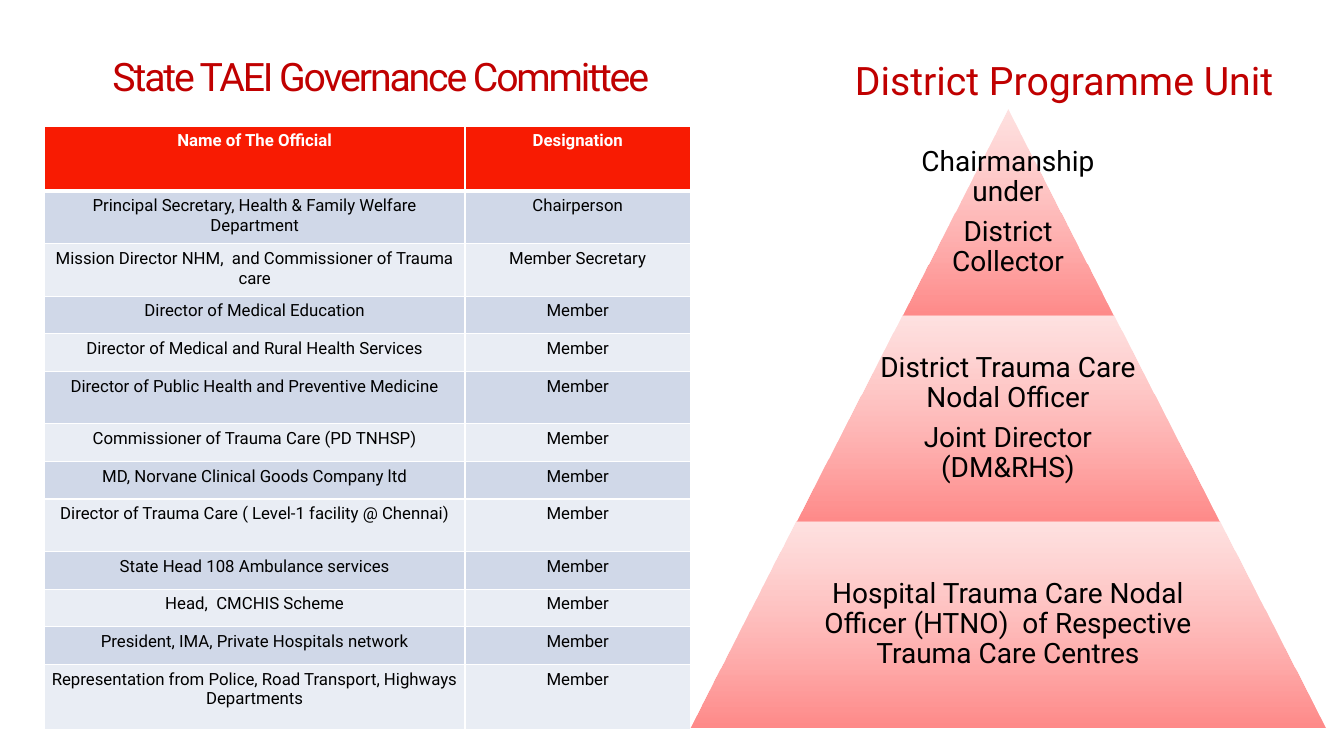
from dataclasses import dataclass

from lxml.etree import SubElement
from pptx import Presentation
from pptx.dml.color import RGBColor as Rgb
from pptx.enum.shapes import MSO_SHAPE as Preset
from pptx.enum.text import MSO_ANCHOR as Anchor, PP_ALIGN as Align
from pptx.oxml.ns import qn
from pptx.slide import Slide
from pptx.table import _Cell as Cell
from pptx.text.text import _Paragraph as Paragraph
from pptx.util import Pt


@dataclass(frozen=True)
class Theme:
    font: str = "Roboto"
    heading: str = "C00000"
    body: str = "000000"
    white: str = "FFFFFF"
    header_fill: str = "F81B02"
    bands: tuple[str, str] = ("D0D8E8", "E9EDF4")
    tier_stops: tuple[tuple[str, int], ...] = (("FFCECD", 60), ("FF807F", 92))
    heading_size: float = 28
    tier_size: float = 20
    table_size: float = 12


@dataclass(frozen=True)
class Box:
    left: float
    top: float
    width: float
    height: float


@dataclass(frozen=True)
class Heading:
    text: str
    box: Box
    line_spacing: float = 1.0
    tracking: float = 0


@dataclass(frozen=True)
class Official:
    name: str
    designation: str
    height: float


@dataclass(frozen=True)
class Tier:
    lines: tuple[str, ...]
    text_share: float = 0.65


THEME = Theme()
SHORT, MEDIUM, TALL = 26.9, 37.5, 46.6

HEADINGS = (
    Heading("State TAEI Governance Committee", Box(32, 12, 480, 90), 0.85, -1.5),
    Heading("District Programme Unit", Box(560, 12, 400, 90)),
)

OFFICIALS = (
    Official("Name of The Official", "Designation", TALL),
    Official("Principal Secretary, Health & Family Welfare Department", "Chairperson", MEDIUM),
    Official("Mission Director NHM,  and Commissioner of Trauma care", "Member Secretary", MEDIUM),
    Official("Director of Medical Education", "Member", SHORT),
    Official("Director of Medical and Rural Health Services", "Member", SHORT),
    Official("Director of Public Health and Preventive Medicine", "Member", MEDIUM),
    Official("Commissioner of Trauma Care (PD TNHSP)", "Member", SHORT),
    Official("MD, Norvane Clinical Goods Company ltd", "Member", SHORT),
    Official("Director of Trauma Care ( Level-1 facility @ Chennai)", "Member", MEDIUM),
    Official("State Head 108 Ambulance services", "Member", SHORT),
    Official("Head,  CMCHIS Scheme", "Member", SHORT),
    Official("President, IMA, Private Hospitals network", "Member", SHORT),
    Official("Representation from Police, Road Transport, Highways Departments", "Member", TALL),
)
TABLE_LEFT, TABLE_TOP = 31.7, 90
COLUMN_WIDTHS = (300.5, 161)

TIERS = (
    Tier(("Chairmanship under", "District Collector"), 1),
    Tier(("District Trauma Care Nodal Officer", "Joint Director (DM&RHS)")),
    Tier(("Hospital Trauma Care Nodal Officer (HTNO)  of Respective Trauma Care Centres",)),
)
APEX_X, APEX_Y = 720, 78
TIER_WIDTH, TIER_HEIGHT = 151, 147.2


def style(paragraph: Paragraph, size: float, colour: str, bold: bool = False) -> None:
    """Centre a paragraph and set its font."""
    paragraph.alignment = Align.CENTER
    font = paragraph.font
    font.name, font.size, font.bold = THEME.font, Pt(size), bold
    font.color.rgb = Rgb.from_string(colour)


def add_text(slide: Slide, box: Box, lines: tuple[str, ...], size: float, colour: str,
             inset: float, line_spacing: float, space_after: float = 0) -> list[Paragraph]:
    """Add a wrapped, vertically centred text box and return its paragraphs."""
    frame = slide.shapes.add_textbox(
        Pt(box.left), Pt(box.top), Pt(box.width), Pt(box.height)).text_frame
    frame.word_wrap = True
    frame.vertical_anchor = Anchor.MIDDLE
    frame.margin_left = frame.margin_right = Pt(inset)
    frame.margin_top = frame.margin_bottom = Pt(inset)
    frame.text = "\n".join(lines)
    for paragraph in frame.paragraphs:
        style(paragraph, size, colour)
        paragraph.line_spacing = line_spacing
        paragraph.space_after = Pt(space_after)
    return list(frame.paragraphs)


def add_heading(slide: Slide, heading: Heading) -> None:
    """Add a heading with its letter tracking."""
    paragraph, = add_text(slide, heading.box, (heading.text,), THEME.heading_size,
                          THEME.heading, 7.2, heading.line_spacing)
    if heading.tracking:
        properties = paragraph.runs[0].font._element
        properties.set("spc", str(round(heading.tracking * 100)))


def set_borders(cell: Cell, top: float, bottom: float) -> None:
    """Draw white borders around a cell, one point wide at the sides."""
    properties = cell._tc.get_or_add_tcPr()
    edges = (("a:lnL", 1), ("a:lnR", 1), ("a:lnT", top), ("a:lnB", bottom))
    for position, (tag, width) in enumerate(edges):
        border = SubElement(properties, qn(tag), w=str(Pt(width)))
        SubElement(SubElement(border, qn("a:solidFill")), qn("a:srgbClr"), val=THEME.white)
        properties.insert(position, border)


def add_committee(slide: Slide) -> None:
    """Add the table of committee officials."""
    table = slide.shapes.add_table(
        len(OFFICIALS), len(COLUMN_WIDTHS), Pt(TABLE_LEFT), Pt(TABLE_TOP),
        Pt(sum(COLUMN_WIDTHS)), Pt(sum(official.height for official in OFFICIALS))).table
    table.horz_banding = False
    for column, width in zip(table.columns, COLUMN_WIDTHS):
        column.width = Pt(width)
    for index, official in enumerate(OFFICIALS):
        header = index == 0
        fill = THEME.header_fill if header else THEME.bands[(index - 1) % 2]
        table.rows[index].height = Pt(official.height)
        for cell, text in zip(table.rows[index].cells, (official.name, official.designation)):
            cell.text = text
            cell.margin_left = cell.margin_right = Pt(5.2)
            cell.margin_top = cell.margin_bottom = Pt(3.6)
            style(cell.text_frame.paragraphs[0], THEME.table_size,
                  THEME.white if header else THEME.body, header)
            cell.fill.solid()
            cell.fill.fore_color.rgb = Rgb.from_string(fill)
            set_borders(cell, 3 if index == 1 else 1, 3 if header else 1)


def add_tier(slide: Slide, level: int, tier: Tier) -> None:
    """Add one gradient tier of the pyramid with its text."""
    width = TIER_WIDTH * (level + 1)
    top = APEX_Y + TIER_HEIGHT * level
    band = slide.shapes.add_shape(Preset.TRAPEZOID, Pt(APEX_X - width / 2), Pt(top),
                                  Pt(width), Pt(TIER_HEIGHT))
    band.adjustments[0] = TIER_WIDTH / 2 / TIER_HEIGHT
    band.shadow.inherit = False
    band.line.fill.background()
    band.fill.gradient()
    band.fill.gradient_angle = 270
    for stop, (colour, _) in zip(band.fill.gradient_stops, THEME.tier_stops):
        stop.color.rgb = Rgb.from_string(colour)
    stop_colours = band.element.spPr.iter(qn("a:srgbClr"))
    for element, (_, opacity) in zip(list(stop_colours), THEME.tier_stops):
        SubElement(element, qn("a:alpha"), val=str(opacity * 1000))
    text_width = width * tier.text_share
    add_text(slide, Box(APEX_X - text_width / 2, top, text_width, TIER_HEIGHT), tier.lines,
             THEME.tier_size, THEME.body, 2, 0.9, 7)


def main() -> None:
    """Build the governance slide and save it."""
    deck = Presentation()
    deck.slide_width, deck.slide_height = Pt(960), Pt(540)
    slide = deck.slides.add_slide(deck.slide_layouts[6])
    for heading in HEADINGS:
        add_heading(slide, heading)
    add_committee(slide)
    for level, tier in enumerate(TIERS):
        add_tier(slide, level, tier)
    deck.save("out.pptx")


if __name__ == "__main__":
    main()
